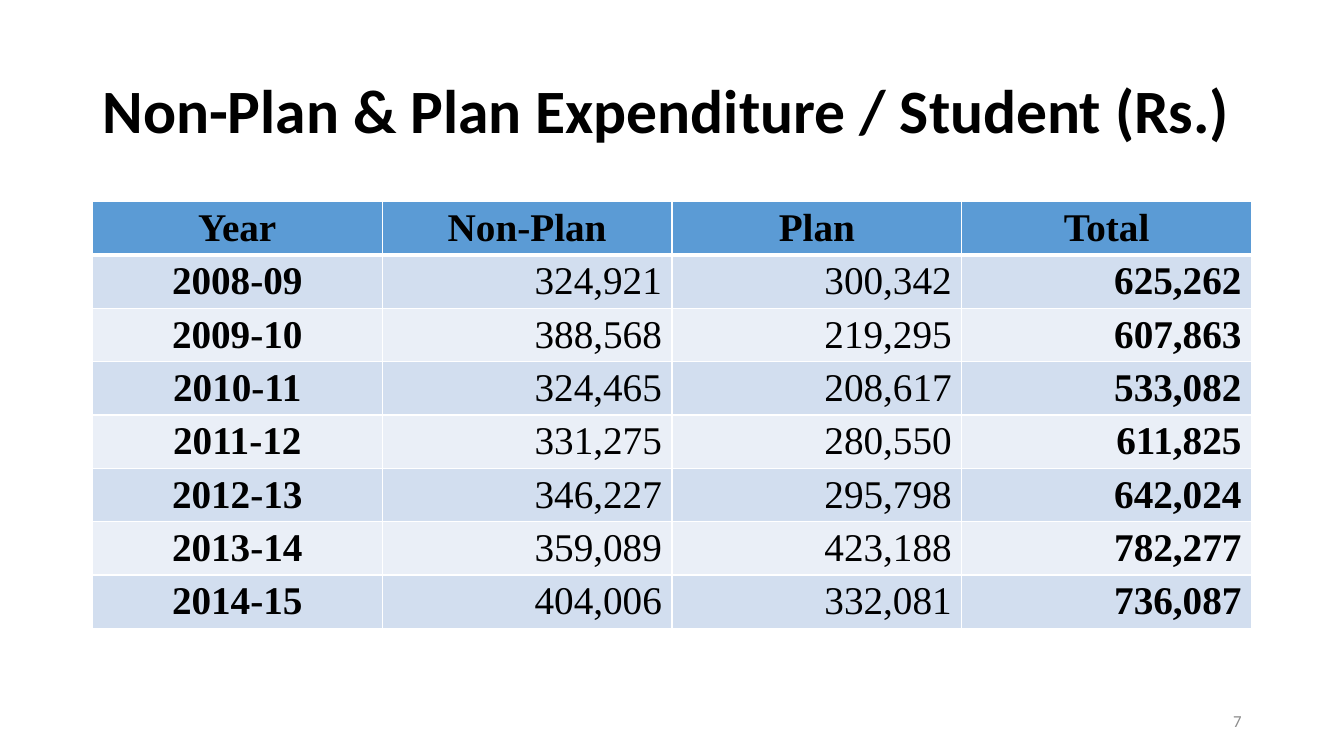
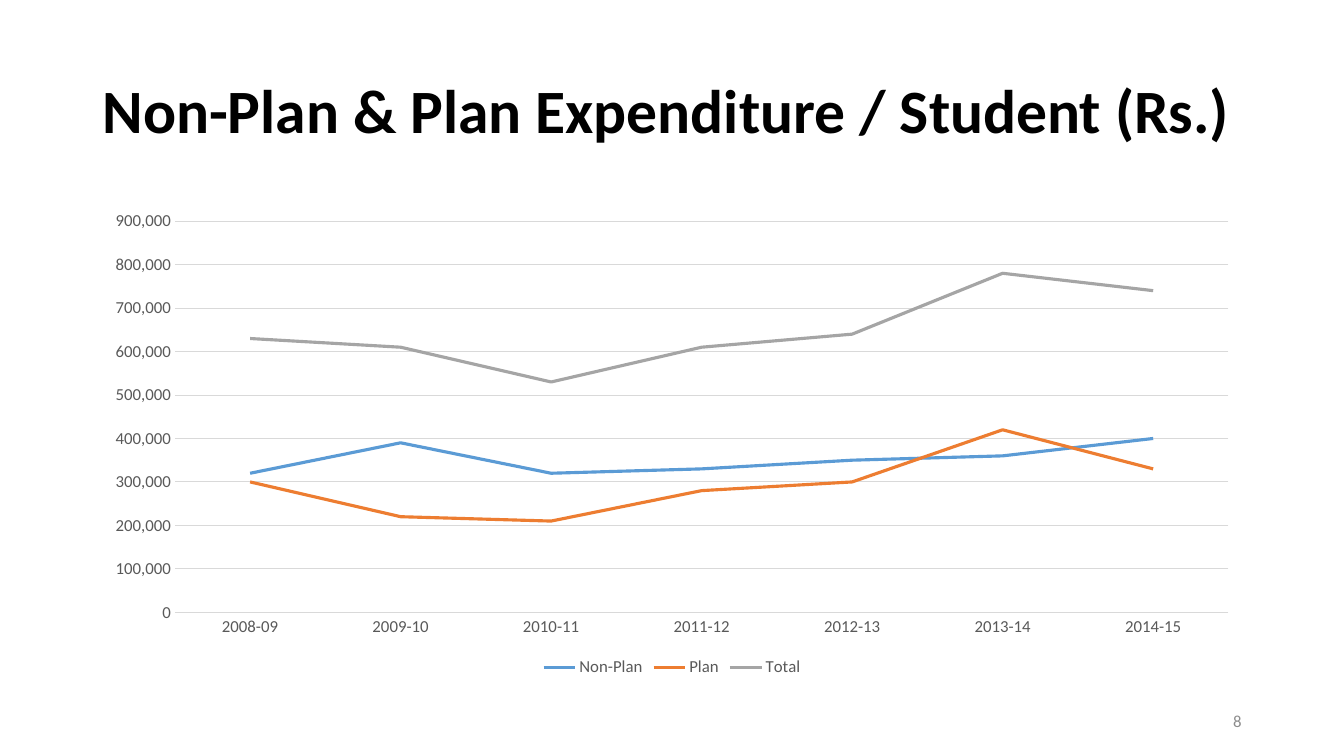
import dataclasses

import lxml.etree
import pptx
import pptx.chart.data
import pptx.dml.color
import pptx.enum.chart
import pptx.enum.text
import pptx.oxml.ns
import pptx.presentation
import pptx.slide
import pptx.table
import pptx.text.text
import pptx.util

WIDE, HIGH = pptx.util.Inches(13.33), pptx.util.Inches(7.5)
COLS, ROWS = 160, 90
SANS, SERIF = "Calibri", "Times New Roman"
HUES = {
    "ink": "000000",
    "paper": "FFFFFF",
    "label": "595959",
    "grid": "D9D9D9",
    "page": "8C8C8C",
    "head": "5B9BD5",
    "odd": "D2DEEF",
    "even": "EAEFF7",
    "Non-Plan": "5B9BD5",
    "Plan": "ED7D31",
    "Total": "A5A5A5",
}
ALIGN = pptx.enum.text.PP_ALIGN
MIDDLE = pptx.enum.text.MSO_ANCHOR.MIDDLE
TITLE = "Non-Plan & Plan Expenditure / Student (Rs.)"


@dataclasses.dataclass(frozen=True)
class Box:
    """A place on the slide, in columns and rows of the grid."""
    left: float
    top: float
    width: float
    height: float

    def spots(self) -> tuple[int, int, int, int]:
        across, down = WIDE / COLS, HIGH / ROWS
        return (round(self.left * across), round(self.top * down),
                round(self.width * across), round(self.height * down))


@dataclasses.dataclass(frozen=True)
class Year:
    name: str
    base: int
    plan: int
    total: int

    def sums(self) -> tuple[int, int, int]:
        return self.base, self.plan, self.total


HEADS = ("Year", "Non-Plan", "Plan", "Total")
YEARS = (
    Year("2008-09", 324921, 300342, 625262),
    Year("2009-10", 388568, 219295, 607863),
    Year("2010-11", 324465, 208617, 533082),
    Year("2011-12", 331275, 280550, 611825),
    Year("2012-13", 346227, 295798, 642024),
    Year("2013-14", 359089, 423188, 782277),
    Year("2014-15", 404006, 332081, 736087),
)
TOP_BOX = Box(11, 4.8, 138, 17.4)
TABLE_BOX = Box(11, 24, 138, 50.8)
CHART_BOX = Box(11, 24, 138, 57.1)
PAGE_BOX = Box(113, 83.4, 36, 4.8)


def shade(key: str) -> pptx.dml.color.RGBColor:
    return pptx.dml.color.RGBColor.from_string(HUES[key])


def style(font: pptx.text.text.Font, name: str, size: float, hue: str,
          bold: bool = False) -> None:
    font.name, font.size, font.bold = name, pptx.util.Pt(size), bold
    font.color.rgb = shade(hue)


def start(deck: pptx.presentation.Presentation, page: int) -> pptx.slide.Slide:
    """Add a slide with the shared title and its page number."""
    slide = deck.slides.add_slide(deck.slide_layouts[5])
    title = slide.shapes.title
    title.left, title.top, title.width, title.height = TOP_BOX.spots()
    frame = title.text_frame
    frame.text = TITLE
    frame.auto_size = pptx.enum.text.MSO_AUTO_SIZE.NONE
    frame.vertical_anchor = MIDDLE
    para = frame.paragraphs[0]
    para.alignment, para.line_spacing = ALIGN.LEFT, 0.9
    style(para.font, SANS, 44, "ink", True)

    frame = slide.shapes.add_textbox(*PAGE_BOX.spots()).text_frame
    frame.text = str(page)
    frame.word_wrap, frame.vertical_anchor = True, MIDDLE
    para = frame.paragraphs[0]
    para.alignment = ALIGN.RIGHT
    style(para.font, SANS, 12, "page")
    return slide


def edge(cell: pptx.table._Cell, base: float) -> None:
    """Draw thin cell borders, with a bottom one of the given points."""
    props = cell._tc.get_or_add_tcPr()
    qn = pptx.oxml.ns.qn
    for side, size in zip("LRTB", (1, 1, 1, base)):
        line = lxml.etree.SubElement(props, qn(f"a:ln{side}"),
                                     w=str(pptx.util.Pt(size)))
        fill = lxml.etree.SubElement(line, qn("a:solidFill"))
        lxml.etree.SubElement(fill, qn("a:srgbClr"), val=HUES["paper"])


def add_table(slide: pptx.slide.Slide) -> None:
    lines = [HEADS] + [(year.name, *(f"{num:,}" for num in year.sums()))
                       for year in YEARS]
    table = slide.shapes.add_table(len(lines), len(HEADS),
                                   *TABLE_BOX.spots()).table
    last = len(HEADS) - 1
    for row, line in enumerate(lines):
        band = "head" if row == 0 else "odd" if row % 2 else "even"
        for col, text in enumerate(line):
            cell = table.cell(row, col)
            cell.text = text
            cell.vertical_anchor = MIDDLE
            cell.margin_top = cell.margin_bottom = pptx.util.Inches(0.03)
            edge(cell, 1 if row else 3)
            cell.fill.solid()
            cell.fill.fore_color.rgb = shade(band)
            para = cell.text_frame.paragraphs[0]
            para.alignment = ALIGN.RIGHT if row and col else ALIGN.CENTER
            style(para.font, SERIF, 28, "ink", row == 0 or col in (0, last))


def add_chart(slide: pptx.slide.Slide) -> None:
    """Chart the sums, rounded to what the axis lets one read."""
    kinds = pptx.enum.chart
    data = pptx.chart.data.CategoryChartData(number_format="#,##0")
    data.categories = [year.name for year in YEARS]
    for name, sums in zip(HEADS[1:], zip(*(year.sums() for year in YEARS))):
        data.add_series(name, [round(num, -4) for num in sums])
    chart = slide.shapes.add_chart(kinds.XL_CHART_TYPE.LINE,
                                   *CHART_BOX.spots(), data).chart
    style(chart.font, SANS, 10, "ink")
    chart.has_title = False
    chart.has_legend = True
    chart.legend.position = kinds.XL_LEGEND_POSITION.BOTTOM
    chart.legend.include_in_layout = False
    style(chart.legend.font, SANS, 12, "label")

    plot = chart.plots[0]
    plot.vary_by_categories = False
    for item in plot.series:
        item.smooth = False
        item.marker.style = kinds.XL_MARKER_STYLE.NONE
        item.format.line.width = pptx.util.Pt(2.25)
        item.format.line.color.rgb = shade(item.name)

    cats, vals = chart.category_axis, chart.value_axis
    for axis in (cats, vals):
        axis.major_tick_mark = kinds.XL_TICK_MARK.NONE
        axis.minor_tick_mark = kinds.XL_TICK_MARK.NONE
        style(axis.tick_labels.font, SANS, 12, "label")
    vals.has_major_gridlines = True
    vals.minimum_scale, vals.maximum_scale = 0, 900000
    vals.major_unit = 100000
    vals.tick_labels.number_format = "#,##0"
    vals.tick_labels.number_format_is_linked = False
    vals.format.line.fill.background()
    for part in (cats, vals.major_gridlines):
        part.format.line.width = pptx.util.Pt(0.75)
        part.format.line.color.rgb = shade("grid")


def main() -> None:
    deck = pptx.Presentation()
    deck.slide_width, deck.slide_height = WIDE, HIGH
    for page, draw in enumerate((add_table, add_chart), 7):
        draw(start(deck, page))
    deck.save("out.pptx")


if __name__ == "__main__":
    main()
